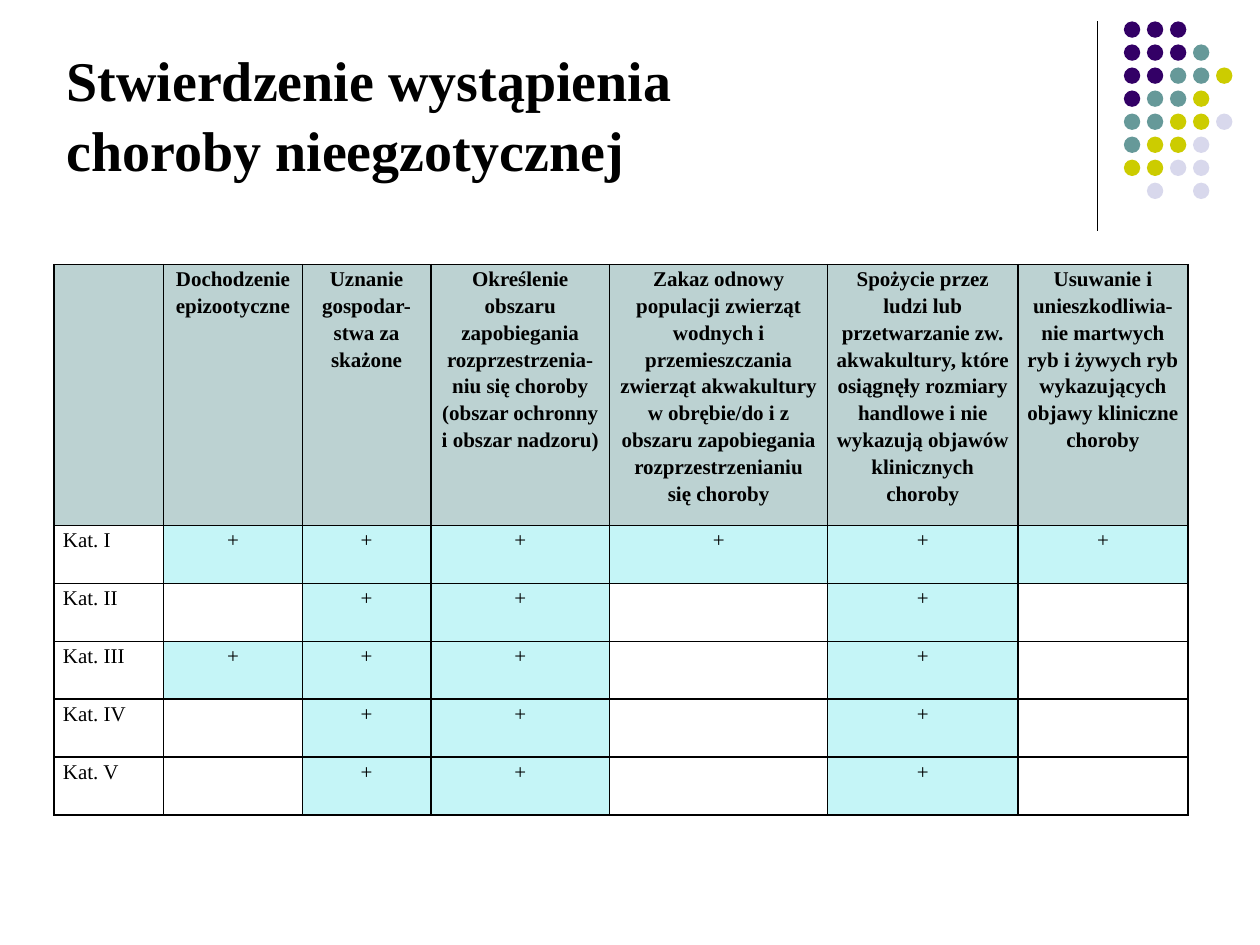
from lxml import etree
from pptx import Presentation
from pptx.dml.color import RGBColor
from pptx.enum import shapes, text
from pptx.oxml.ns import qn
from pptx.util import Inches, Pt

BLACK = RGBColor(0x00, 0x00, 0x00)
PURPLE = RGBColor(0x33, 0x00, 0x66)
TEAL = RGBColor(0x66, 0x99, 0x99)
OLIVE = RGBColor(0xCC, 0xCC, 0x00)
LAVENDER = RGBColor(0xD8, 0xD8, 0xEC)
HEADER_FILL = RGBColor(0xBC, 0xD2, 0xD2)
MARK_FILL = RGBColor(0xC5, 0xF5, 0xF7)

DOT_COLOURS = {"P": PURPLE, "T": TEAL, "O": OLIVE, "L": LAVENDER}
DOTS = ["PPP", "PPPT", "PPTTO", "PTTO", "TTOOL", "TOOL", "OOLL", " L L"]

HEADERS = [
    "",
    "Dochodzenie epizootyczne",
    "Uznanie gospodar-stwa za skażone",
    "Określenie obszaru zapobiegania rozprzestrzenia-niu się choroby "
    "(obszar ochronny i obszar nadzoru)",
    "Zakaz odnowy populacji zwierząt wodnych i przemieszczania zwierząt akwakultury "
    "w obrębie/do i z obszaru zapobiegania rozprzestrzenianiu\vsię choroby",
    "Spożycie przez ludzi lub przetwarzanie zw. akwakultury, które osiągnęły "
    "rozmiary handlowe i nie wykazują objawów klinicznych choroby",
    "Usuwanie i unieszkodliwia-nie martwych ryb i żywych ryb "
    "wykazujących objawy kliniczne choroby",
]
# Columns that carry a plus sign in each category
CATEGORIES = {
    "Kat. I": {1, 2, 3, 4, 5, 6},
    "Kat. II": {2, 3, 5},
    "Kat. III": {1, 2, 3, 5},
    "Kat. IV": {2, 3, 5},
    "Kat. V": {2, 3, 5},
}
COL_WIDTHS = [0.87, 1.1, 1.02, 1.42, 1.73, 1.51, 1.35]
HEADER_HEIGHT, ROW_HEIGHT = 2.07, 0.46


def set_attrs(obj, **values):
    for name, value in values.items():
        setattr(obj, name, value)


def style_text(p, size, bold):
    set_attrs(p.font, name="Times New Roman", size=Pt(size), bold=bold)
    p.font.color.rgb = BLACK


def add_divider(s, x, y, height):
    line = s.shapes.add_connector(shapes.MSO_CONNECTOR.STRAIGHT, x, y, x, y + height)
    line.line.color.rgb = BLACK
    line.line.width = Pt(0.75)
    etree.SubElement(line._element.spPr, qn("a:effectLst"))


def add_dots(s, x, y, height):
    size = Inches(0.13)
    pitch = (height - size) / (len(DOTS) - 1)
    group = s.shapes.add_group_shape()
    for row, codes in enumerate(DOTS):
        for col, code in enumerate(codes):
            if code == " ":
                continue
            dot = group.shapes.add_shape(
                shapes.MSO_SHAPE.OVAL, round(x + col * pitch), round(y + row * pitch), size, size)
            dot.shadow.inherit = False
            dot.fill.solid()
            dot.fill.fore_color.rgb = DOT_COLOURS[code]
            dot.line.fill.background()


def add_title(s, x, y, width, height):
    tf = s.shapes.add_textbox(x, y, width, height).text_frame
    tf.word_wrap = True
    p = tf.paragraphs[0]
    p.text = "Stwierdzenie wystąpienia choroby nieegzotycznej"
    p.line_spacing = 1.04
    style_text(p, 32, True)


def set_borders(cell):
    tc_pr = cell._tc.get_or_add_tcPr()
    for i, side in enumerate(("lnL", "lnR", "lnT", "lnB")):
        ln = etree.Element(qn(f"a:{side}"), w=str(Pt(1)))
        fill = etree.SubElement(ln, qn("a:solidFill"))
        etree.SubElement(fill, qn("a:srgbClr"), val=str(BLACK))
        tc_pr.insert(i, ln)


def fill_cell(cell, label, fill=None, bold=False, align=text.PP_ALIGN.CENTER):
    set_attrs(cell, margin_left=Inches(0.07), margin_right=Inches(0.07),
              margin_top=0, margin_bottom=0)
    p = cell.text_frame.paragraphs[0]
    p.text = label
    set_attrs(p, alignment=align, line_spacing=1.15)
    style_text(p, 12, bold)
    if fill is None:
        cell.fill.background()
    else:
        cell.fill.solid()
        cell.fill.fore_color.rgb = fill
    set_borders(cell)


def add_measures_table(s, x, y):
    heights = [HEADER_HEIGHT] + [ROW_HEIGHT] * len(CATEGORIES)
    table = s.shapes.add_table(len(heights), len(COL_WIDTHS), x, y,
                               Inches(sum(COL_WIDTHS)), Inches(sum(heights))).table
    set_attrs(table, first_row=False, horz_banding=False)
    for column, width in zip(table.columns, COL_WIDTHS):
        column.width = Inches(width)
    for row, height in zip(table.rows, heights):
        row.height = Inches(height)
    for col, header in enumerate(HEADERS):
        fill_cell(table.cell(0, col), header, HEADER_FILL, bold=True)
    for row, (category, marked) in enumerate(CATEGORIES.items(), 1):
        fill_cell(table.cell(row, 0), category, align=text.PP_ALIGN.LEFT)
        for col in range(1, len(COL_WIDTHS)):
            if col in marked:
                fill_cell(table.cell(row, col), "+", MARK_FILL)
            else:
                fill_cell(table.cell(row, col), "")


def main():
    prs = Presentation()
    set_attrs(prs, slide_width=Inches(10), slide_height=Inches(7.5))
    s = prs.slides.add_slide(prs.slide_layouts[6])
    add_divider(s, Inches(8.71), Inches(0.17), Inches(1.66))
    add_dots(s, Inches(8.92), Inches(0.17), Inches(1.41))
    add_title(s, Inches(0.43), Inches(0.29), Inches(5.14), Inches(1.18))
    add_measures_table(s, Inches(0.43), Inches(2.1))
    prs.save("out.pptx")


if __name__ == "__main__":
    main()
